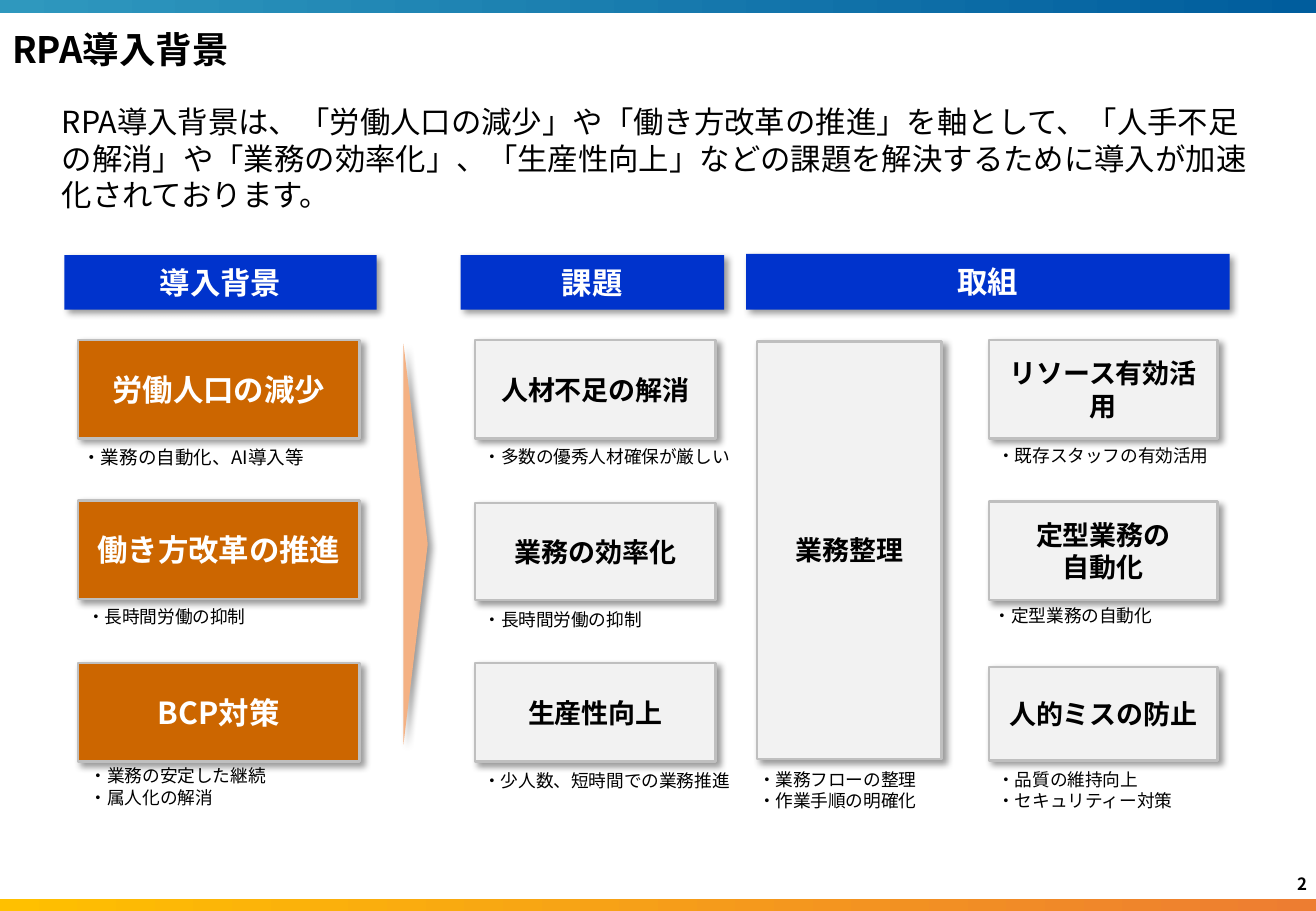
from lxml.etree import SubElement
from pptx import Presentation
from pptx.dml.color import RGBColor
from pptx.enum.lang import MSO_LANGUAGE_ID as LANG
from pptx.enum.shapes import MSO_SHAPE as SHAPE
from pptx.enum.text import MSO_ANCHOR as ANCHOR, MSO_AUTO_SIZE as AUTO, PP_ALIGN as ALIGN
from pptx.oxml.ns import qn
from pptx.util import Inches, Pt

FONT = "Noto Sans CJK JP"
BLACK = RGBColor(0x00, 0x00, 0x00)
WHITE = RGBColor(0xFF, 0xFF, 0xFF)
BLUE = RGBColor(0x00, 0x33, 0xCC)
ORANGE = RGBColor(0xCC, 0x66, 0x00)
PALE = RGBColor(0xF2, 0xF2, 0xF2)
GRAY = RGBColor(0xBF, 0xBF, 0xBF)
PEACH = RGBColor(0xF4, 0xB1, 0x83)
SKY, NAVY = RGBColor(0x2F, 0x98, 0xBE), RGBColor(0x00, 0x5D, 0x9D)
GOLD, AMBER = RGBColor(0xFF, 0xC0, 0x00), RGBColor(0xED, 0x7D, 0x31)


class Deck:
    def __init__(self, width, height):
        self.prs = Presentation()
        self.prs.slide_width, self.prs.slide_height = Inches(width), Inches(height)
        self.s = self.prs.slides.add_slide(self.prs.slide_layouts[5])

    def fill_text(self, tf, text, size, color=BLACK, bold=False, align=ALIGN.LEFT,
                  anchor=ANCHOR.MIDDLE, spacing=1.0):
        """Fill a text frame, one paragraph per line of text."""
        frame = {"word_wrap": True, "auto_size": AUTO.NONE, "vertical_anchor": anchor}
        for name, value in frame.items():
            setattr(tf, name, value)
        for i, line in enumerate(text.split("\n")):
            p = tf.add_paragraph() if i else tf.paragraphs[0]
            p.alignment, p.line_spacing = align, spacing
            r = p.add_run()
            r.text = line
            r.font.color.rgb = color
            style = {"name": FONT, "size": Pt(size), "bold": bold,
                     "language_id": LANG.JAPANESE}
            for name, value in style.items():
                setattr(r.font, name, value)
            SubElement(r.font._element, qn("a:ea"), typeface=FONT)

    def title(self, text, at):
        sp = self.s.shapes.title
        sp.left, sp.top, sp.width, sp.height = map(Inches, at)
        self.fill_text(sp.text_frame, text, 21.6, bold=True, spacing=0.9)

    def text(self, text, at, size, **style):
        sp = self.s.shapes.add_textbox(*map(Inches, at))
        self.fill_text(sp.text_frame, text, size, **style)
        return sp

    def note(self, text, at, size=10.5):
        self.text(text, at, size, anchor=ANCHOR.TOP)

    def shape(self, kind, at):
        sp = self.s.shapes.add_shape(kind, *map(Inches, at))
        sp.shadow.inherit = False
        sp.line.fill.background()
        return sp

    def band(self, at, colors):
        fill = self.shape(SHAPE.RECTANGLE, at).fill
        fill.gradient()
        fill.gradient_angle = 0
        for stop, position, color in zip(fill.gradient_stops, (0, 1), colors):
            stop.position, stop.color.rgb = position, color

    def raised(self, kind, at, color):
        """Add a filled shape with a soft shadow to the lower right."""
        sp = self.shape(kind, at)
        sp.fill.solid()
        sp.fill.fore_color.rgb = color
        effects = sp._element.spPr.find(qn("a:effectLst"))
        shadow = SubElement(effects, qn("a:outerShdw"), blurRad=str(Pt(4)),
                            dist=str(Pt(3)), dir="2700000", algn="tl", rotWithShape="0")
        black = SubElement(shadow, qn("a:srgbClr"), val="000000")
        SubElement(black, qn("a:alpha"), val="40000")
        return sp

    def box(self, text, at, fill, size=18, color=WHITE, outlined=True):
        sp = self.raised(SHAPE.RECTANGLE, at, fill)
        if outlined:
            sp.line.color.rgb = GRAY
            sp.line.width = Pt(1.5)
        self.fill_text(sp.text_frame, text, size, color, True, ALIGN.CENTER)

    def arrow(self, at, color):
        self.raised(SHAPE.ISOSCELES_TRIANGLE, at, color).rotation = 90

    def page_number(self, text, at):
        tf = self.text(text, at, 10, bold=True, align=ALIGN.CENTER).text_frame
        for side in ("left", "top", "right", "bottom"):
            setattr(tf, f"margin_{side}", 0)
        tf.word_wrap = False


HEADERS = [
    ("導入背景", (0.53, 2.1, 2.57, 0.45)),
    ("課題", (3.79, 2.1, 2.17, 0.45)),
    ("取組", (6.14, 2.09, 3.98, 0.46)),
]
# Each column: left, width, fill, text size, text colour, (label, top, height) boxes
COLUMNS = [
    (0.64, 2.32, ORANGE, 18, WHITE, [
        ("労働人口の減少", 2.8, 0.81), ("働き方改革の推進", 4.12, 0.81), ("BCP対策", 5.46, 0.81)]),
    (3.91, 1.98, PALE, 16, BLACK, [
        ("人材不足の解消", 2.8, 0.81), ("業務の効率化", 4.14, 0.8), ("生産性向上", 5.46, 0.81)]),
    (6.23, 1.52, PALE, 16, BLACK, [("業務整理", 2.81, 3.44)]),
    (8.14, 1.88, PALE, 16, BLACK, [
        ("リソース有効活用", 2.8, 0.81), ("定型業務の\n自動化", 4.13, 0.81),
        ("人的ミスの防止", 5.49, 0.77)]),
]
NOTES = [
    ("・長時間労働の抑制", (0.62, 4.94, 2.74, 0.47)),
    ("・業務の安定した継続\n・属人化の解消", (0.64, 6.25, 2.69, 0.81)),
    ("・多数の優秀人材確保が厳しい", (3.88, 3.62, 2.35, 0.48)),
    ("・長時間労働の抑制", (3.88, 4.96, 2.35, 0.47)),
    ("・少人数、短時間での業務推進", (3.88, 6.29, 2.33, 0.48)),
    ("・業務フローの整理\n・作業手順の明確化", (6.14, 6.28, 2.33, 0.58)),
    ("・既存スタッフの有効活用", (8.11, 3.61, 2.26, 0.48)),
    ("・定型業務の自動化", (8.08, 4.93, 2.29, 0.47)),
    ("・品質の維持向上\n・セキュリティー対策", (8.11, 6.28, 2.26, 0.6)),
]


def main():
    deck = Deck(10.83, 7.5)
    deck.band((0, 7.4, 10.83, 0.1), (GOLD, AMBER))
    deck.band((0, 0, 10.83, 0.11), (SKY, NAVY))
    deck.page_number("2", (10.66, 7.21, 0.11, 0.13))
    deck.title("RPA導入背景", (0, 0.2, 9.75, 0.46))
    deck.text("RPA導入背景は、「労働人口の減少」や「働き方改革の推進」を軸として、"
              "「人手不足の解消」や「業務の効率化」、「生産性向上」などの課題を"
              "解決するために導入が加速化されております。", (0.41, 0.82, 9.96, 0.96), 18)
    for label, at in HEADERS:
        deck.box(label, at, BLUE, outlined=False)
    for left, width, fill, size, color, boxes in COLUMNS:
        for label, top, height in boxes:
            deck.box(label, (left, top, width, height), fill, size, color)
    deck.arrow((1.77, 4.38, 3.3, 0.2), PEACH)
    deck.note("・業務の自動化、AI導入等", (0.58, 3.62, 2.74, 0.47), 11)
    for text, at in NOTES:
        deck.note(text, at)
    deck.prs.save("out.pptx")


if __name__ == "__main__":
    main()
